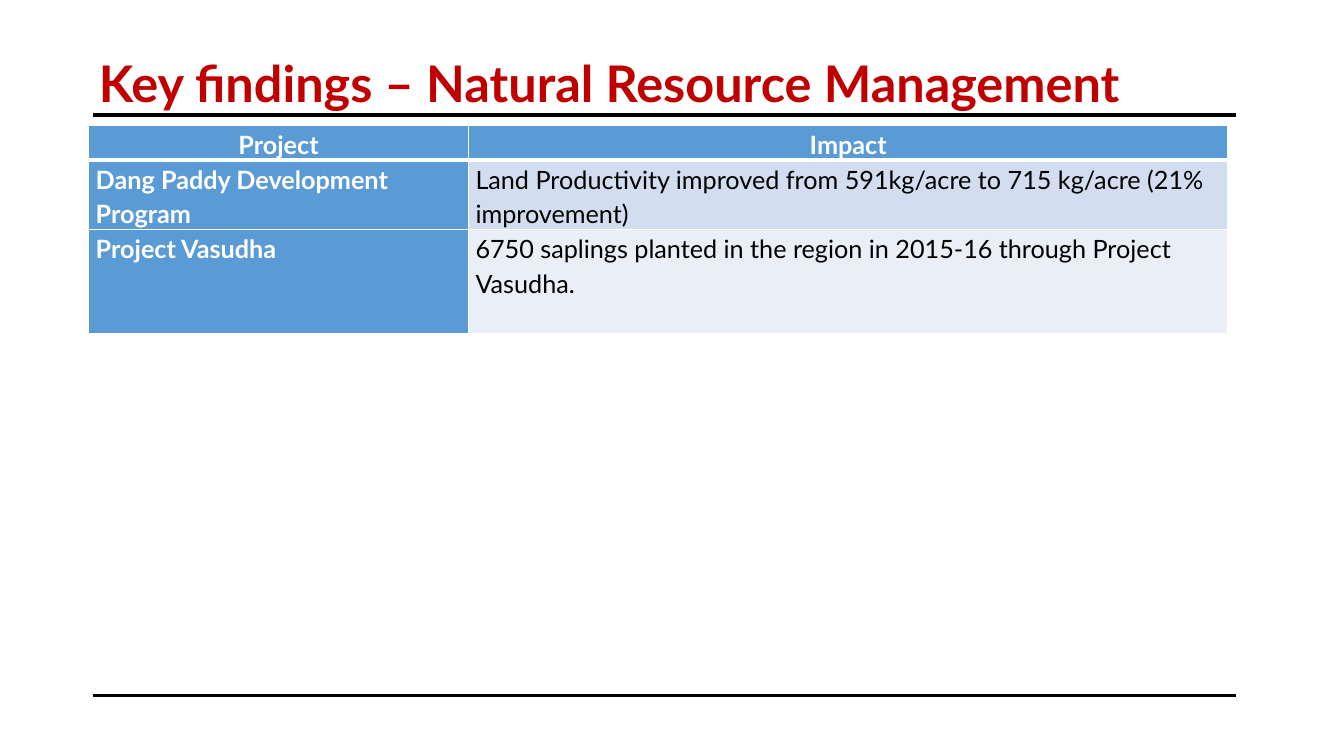
"""Build the natural resource management findings slide."""
from dataclasses import dataclass

from lxml import etree
from pptx import Presentation
from pptx import util as u
from pptx.dml.color import RGBColor
from pptx.enum import shapes, text
from pptx.oxml import ns

CELL = u.Inches(0.1)
COLOURS = {"title": "C00000", "rule": "000000", "body": "000000", "white": "FFFFFF",
           "head": "5B9BD5", "odd": "D2DEEF", "even": "EAEFF7"}
TABLE_LEFT, TABLE_TOP, TABLE_WIDTH = 8.8, 12.4, 113
COLUMN_SHARES = (1 / 3, 2 / 3)
LINE_ROWS = 3.45
RULE_LEFT, RULE_RIGHT = 9.2, 122.6


@dataclass
class Rule:
    row: float
    weight: float


@dataclass
class Finding:
    project: str
    impact: str
    lines: int
    fill: str
    align: text.PP_ALIGN = text.PP_ALIGN.LEFT


RULES = [Rule(11.4, 3), Rule(69, 1.5)]
FINDINGS = [
    Finding("Project", "Impact", 1, "head", text.PP_ALIGN.CENTER),
    Finding("Dang Paddy Development Program",
            "Land Productivity improved from 591kg/acre to 715 kg/acre (21% improvement)",
            2, "odd"),
    Finding("Project Vasudha",
            "6750 saplings planted in the region in 2015-16 through Project Vasudha.",
            3, "even"),
]


def grid(count: float) -> int:
    """Turn grid cells into a length."""
    return round(count * CELL)


def colour(name: str) -> RGBColor:
    """Look up a named colour."""
    return RGBColor.from_string(COLOURS[name])


def apply(target, values: dict) -> None:
    """Set attributes from a dict of format values."""
    for name, value in values.items():
        setattr(target, name, value)


def write(frame, words: str, size: float, ink: str, bold: bool, align) -> None:
    """Fill a text frame with one formatted paragraph."""
    para = frame.paragraphs[0]
    span = para.add_run()
    span.text = words
    apply(para, {"alignment": align, "line_spacing": 1.15, "space_before": u.Pt(0)})
    apply(span.font, {"name": "Lato", "size": u.Pt(size), "bold": bold})
    span.font.color.rgb = colour(ink)


def add_title(page, words: str) -> None:
    """Place and format the title placeholder."""
    box = page.shapes.title
    apply(box, {"left": grid(TABLE_LEFT), "top": grid(3.8),
                "width": grid(TABLE_WIDTH), "height": grid(7.4)})
    apply(box.text_frame, {"word_wrap": True, "auto_size": text.MSO_AUTO_SIZE.NONE,
                           "vertical_anchor": text.MSO_ANCHOR.TOP})
    write(box.text_frame, words, 36, "title", True, text.PP_ALIGN.LEFT)


def add_rule(page, rule: Rule) -> None:
    """Draw a horizontal rule across the slide."""
    line = page.shapes.add_connector(shapes.MSO_CONNECTOR.STRAIGHT, grid(RULE_LEFT),
                                     grid(rule.row), grid(RULE_RIGHT), grid(rule.row))
    line.line.width = u.Pt(rule.weight)
    line.line.color.rgb = colour("rule")
    etree.SubElement(line._element.spPr, ns.qn("a:effectLst"))


def add_borders(cell, weights: dict[str, float]) -> None:
    """Give a cell white borders, placed ahead of its fill."""
    properties = cell._tc.get_or_add_tcPr()
    for position, (side, weight) in enumerate(weights.items()):
        border = etree.Element(ns.qn(f"a:ln{side}"), w=str(u.Pt(weight)))
        fill = etree.SubElement(border, ns.qn("a:solidFill"))
        etree.SubElement(fill, ns.qn("a:srgbClr"), val=COLOURS["white"])
        properties.insert(position, border)


def add_findings(page, findings: list[Finding]) -> None:
    """Draw the table of findings."""
    height = sum(finding.lines for finding in findings) * LINE_ROWS
    table = page.shapes.add_table(len(findings), len(COLUMN_SHARES), grid(TABLE_LEFT),
                                  grid(TABLE_TOP), grid(TABLE_WIDTH), grid(height)).table
    for column, share in zip(table.columns, COLUMN_SHARES):
        column.width = grid(TABLE_WIDTH * share)
    for row, finding in enumerate(findings):
        table.rows[row].height = grid(finding.lines * LINE_ROWS)
        for column, words in enumerate((finding.project, finding.impact)):
            cell = table.cell(row, column)
            strong = row == 0 or column == 0
            apply(cell, {"margin_left": grid(0.7), "margin_right": grid(0.7),
                         "margin_top": 0, "margin_bottom": 0})
            cell.fill.solid()
            cell.fill.fore_color.rgb = colour("head" if strong else finding.fill)
            add_borders(cell, {"L": 1, "R": 1, "T": 3 if row == 1 else 1,
                               "B": 3 if row == 0 else 1})
            write(cell.text_frame, words, 18, "white" if strong else "body",
                  strong, finding.align)


def main() -> None:
    """Build and save the deck."""
    deck = Presentation()
    apply(deck, {"slide_width": u.Inches(13.33), "slide_height": u.Inches(7.5)})
    page = deck.slides.add_slide(deck.slide_layouts.get_by_name("Title Only"))
    for rule in RULES:
        add_rule(page, rule)
    add_title(page, "Key findings – Natural Resource Management")
    add_findings(page, FINDINGS)
    deck.save("out.pptx")


if __name__ == "__main__":
    main()
